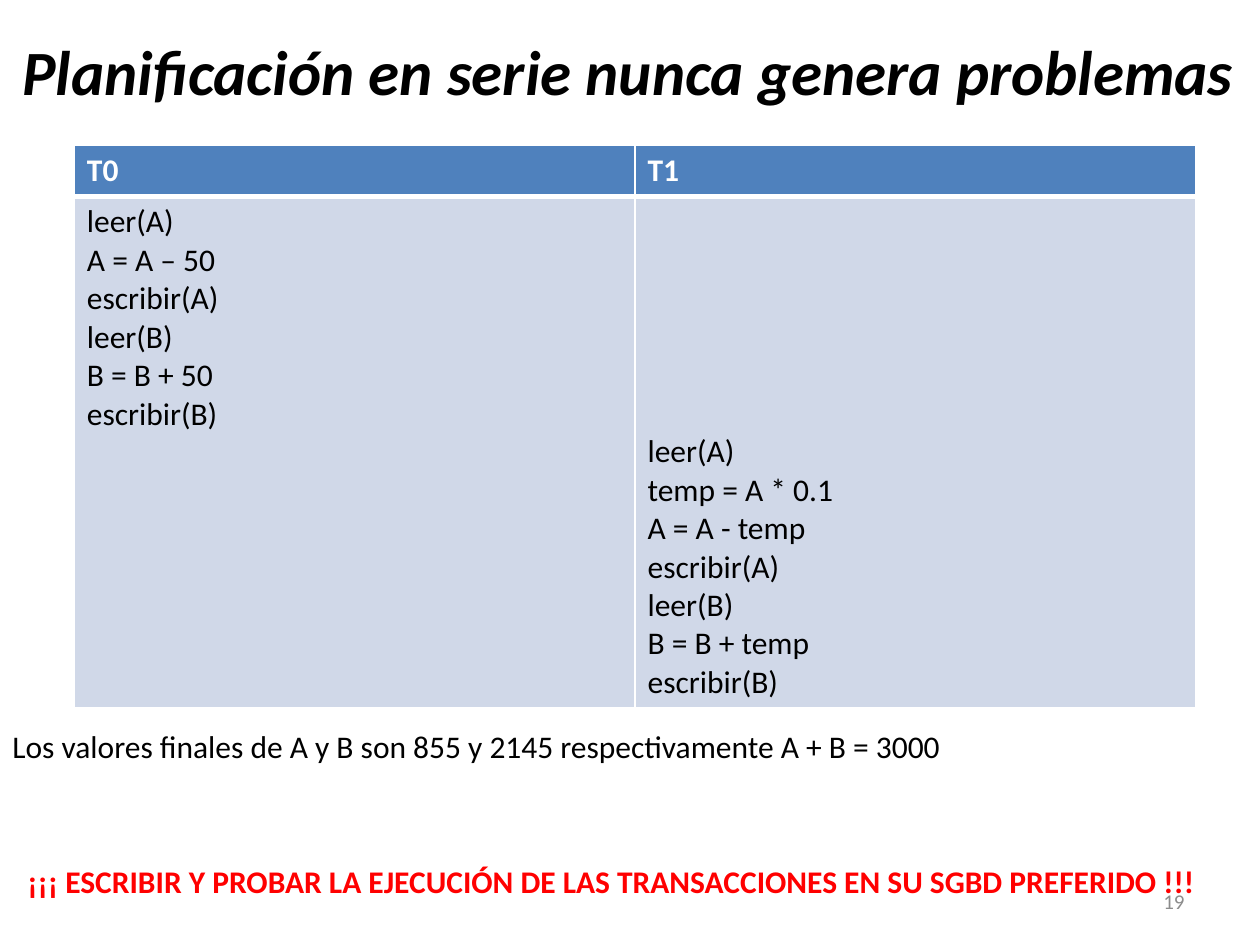
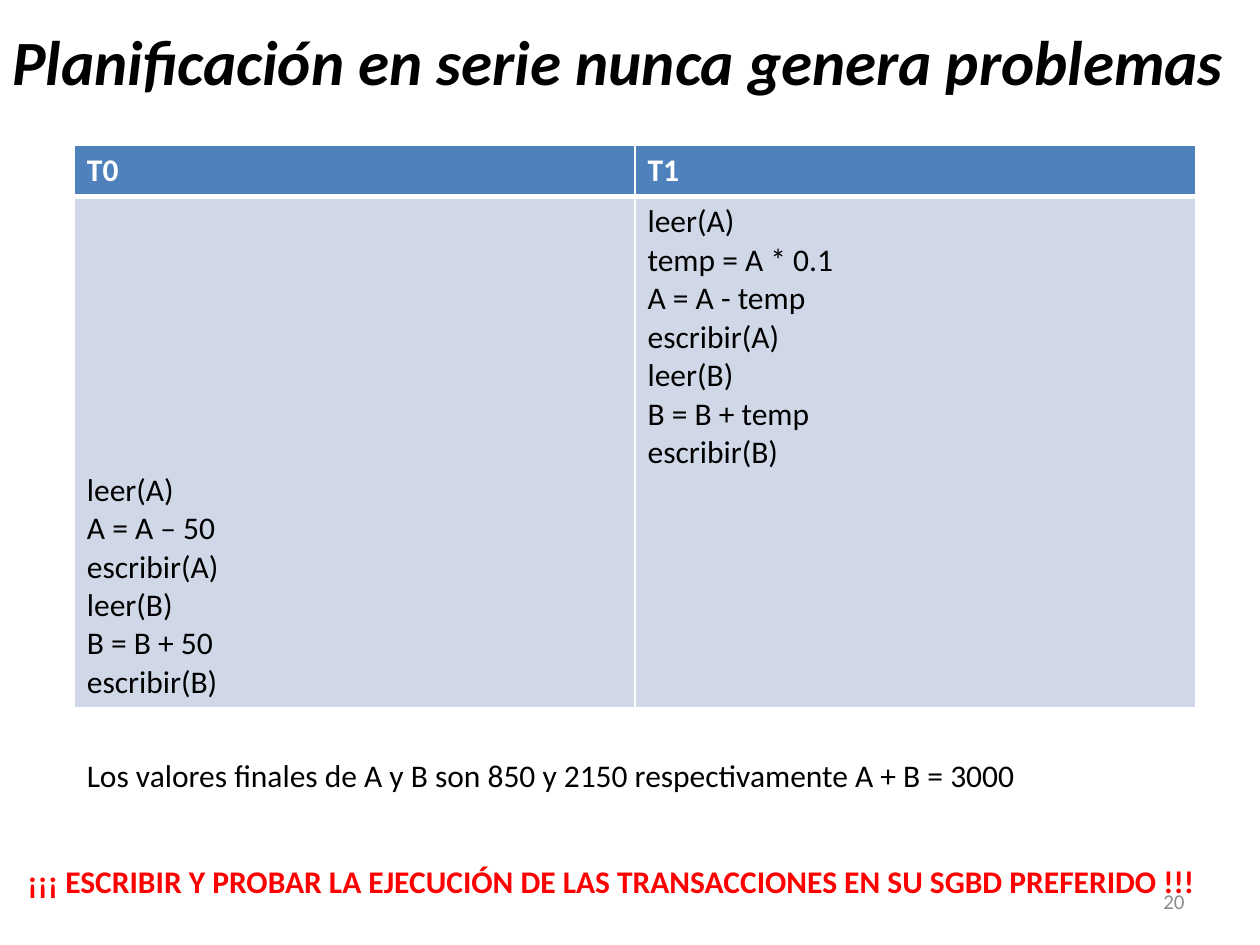
from lxml.etree import SubElement
from pptx import Presentation
from pptx.dml.color import RGBColor
from pptx.enum.text import MSO_ANCHOR, PP_ALIGN
from pptx.oxml.ns import qn
from pptx.util import Inches, Pt

COLORS = {
    "text": "000000",
    "header": "4F81BD",
    "body": "D0D8E8",
    "white": "FFFFFF",
    "warning": "FF0000",
    "number": "8C8C8C",
}
FONT = "Calibri"
TITLE = "Planificación en serie nunca genera problemas"
WARNING = "¡¡¡ ESCRIBIR Y PROBAR LA EJECUCIÓN DE LAS TRANSACCIONES EN SU SGBD PREFERIDO !!!"
TRANSACTIONS = {
    "T0": ["leer(A)", "A = A – 50", "escribir(A)",
           "leer(B)", "B = B + 50", "escribir(B)"],
    "T1": ["leer(A)", "temp = A * 0.1", "A = A - temp", "escribir(A)",
           "leer(B)", "B = B + temp", "escribir(B)"],
}
SCHEDULES = [
    {"first": "T0", "number": "19", "title_box": (0.08, 0.21, 9.88, 0.71),
     "result": "Los valores finales de A y B son 855 y 2145 respectivamente A + B = 3000",
     "result_box": (0, 5.72, 9.88, 0.4)},
    {"first": "T1", "number": "20", "title_box": (0, 0.13, 10, 0.71),
     "result": "Los valores finales de A y B son 850 y 2150 respectivamente A + B = 3000",
     "result_box": (0.59, 5.95, 8.82, 0.4)},
]


def write_lines(frame, lines, size=18, color="text", bold=False, italic=False,
                align=PP_ALIGN.LEFT):
    frame.text = "\n".join(lines)
    for paragraph in frame.paragraphs:
        paragraph.alignment = align
        font = paragraph.font
        font.name, font.size = FONT, Pt(size)
        font.bold, font.italic = bold, italic
        font.color.rgb = RGBColor.from_string(COLORS[color])


def add_text(slide, box, text, anchor=MSO_ANCHOR.TOP, **style):
    frame = slide.shapes.add_textbox(*map(Inches, box)).text_frame
    frame.word_wrap = True
    frame.vertical_anchor = anchor
    write_lines(frame, [text], **style)


def add_borders(cell, **widths):
    """Draw white borders; widths in points are keyed by side: L, R, T, B."""
    properties = cell._tc.get_or_add_tcPr()
    for side, width in widths.items():
        line = SubElement(properties, qn(f"a:ln{side}"), w=str(Pt(width)))
        fill = SubElement(line, qn("a:solidFill"))
        SubElement(fill, qn("a:srgbClr"), val=COLORS["white"])


def fill_cell(cell, color):
    cell.fill.solid()
    cell.fill.fore_color.rgb = RGBColor.from_string(COLORS[color])


def add_schedule_table(slide, first):
    """Show the first transaction at the top and the other one at the bottom."""
    header_height, body_height = Inches(0.41), Inches(4.06)
    table = slide.shapes.add_table(
        2, len(TRANSACTIONS), Inches(0.59), Inches(1.15), Inches(8.9),
        header_height + body_height).table
    table.horz_banding = False
    table.rows[0].height, table.rows[1].height = header_height, body_height
    for column, (name, steps) in enumerate(TRANSACTIONS.items()):
        header, body = table.cell(0, column), table.cell(1, column)
        add_borders(header, L=1, R=1, T=1, B=3)
        add_borders(body, L=1, R=1, T=3, B=1)
        fill_cell(header, "header")
        fill_cell(body, "body")
        write_lines(header.text_frame, [name], color="white", bold=True)
        write_lines(body.text_frame, steps)
        body.vertical_anchor = MSO_ANCHOR.TOP if name == first else MSO_ANCHOR.BOTTOM


def add_schedule_slide(presentation, schedule):
    slide = presentation.slides.add_slide(presentation.slide_layouts[6])
    add_schedule_table(slide, schedule["first"])
    add_text(slide, schedule["title_box"], TITLE, size=36, bold=True, italic=True)
    add_text(slide, schedule["result_box"], schedule["result"])
    add_text(slide, (0.12, 6.79, 9.53, 0.4), WARNING, color="warning", bold=True)
    add_text(slide, (7.17, 6.95, 2.33, 0.4), schedule["number"], size=12,
             color="number", align=PP_ALIGN.RIGHT, anchor=MSO_ANCHOR.MIDDLE)


def main():
    presentation = Presentation()
    presentation.slide_width, presentation.slide_height = Inches(10), Inches(7.5)
    for schedule in SCHEDULES:
        add_schedule_slide(presentation, schedule)
    presentation.save("out.pptx")


if __name__ == "__main__":
    main()
